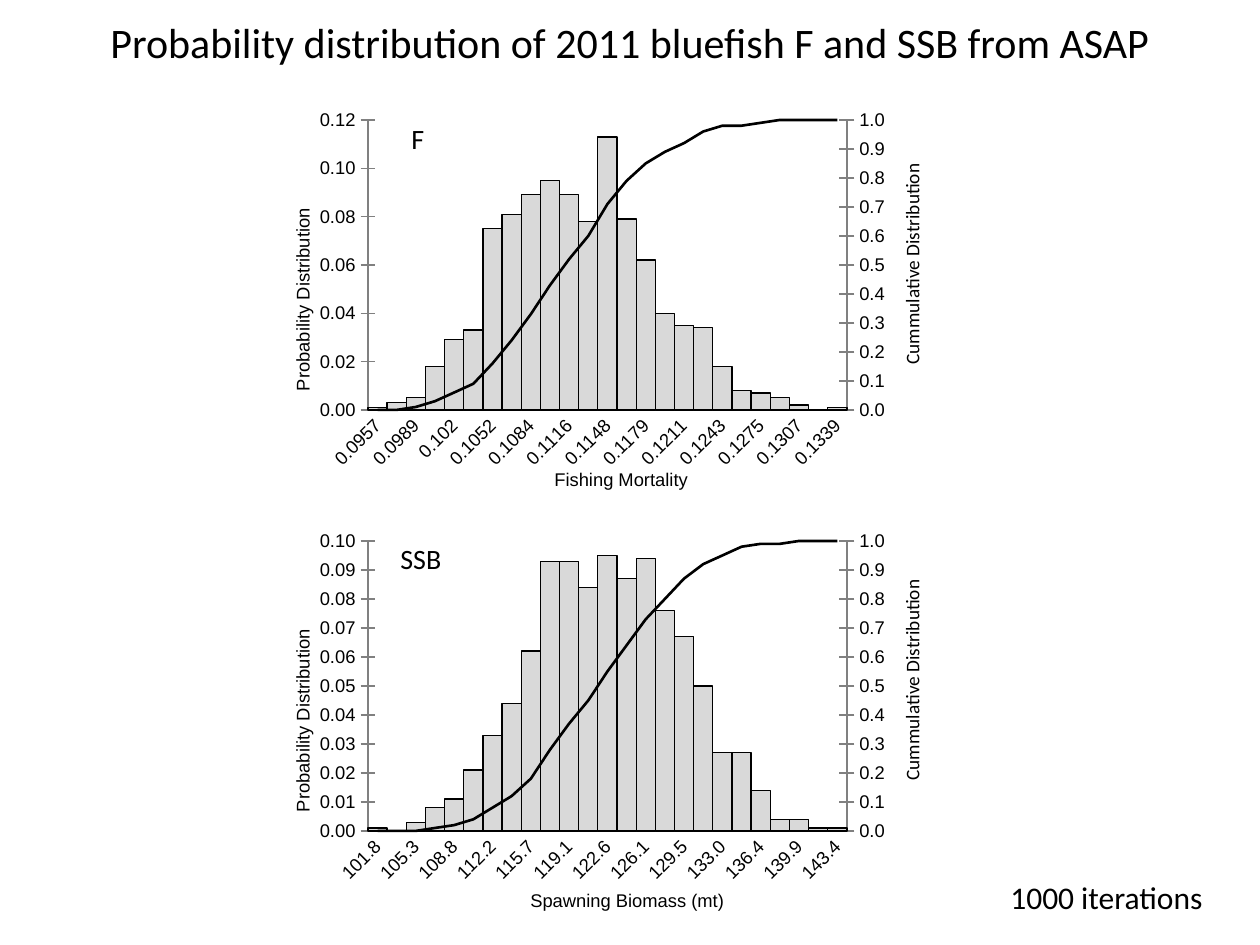
from copy import deepcopy
from dataclasses import dataclass
from itertools import accumulate

from pptx import Presentation
from pptx.chart.axis import CategoryAxis, ValueAxis
from pptx.chart.data import CategoryChartData
from pptx.dml.color import RGBColor
from pptx.enum.chart import XL_CHART_TYPE as ChartType, XL_MARKER_STYLE as Marker, XL_TICK_MARK as Tick
from pptx.enum.text import MSO_ANCHOR as Anchor, MSO_AUTO_SIZE as AutoSize, PP_ALIGN as Align
from pptx.oxml import parse_xml
from pptx.oxml.ns import nsdecls, qn
from pptx.util import Pt

EMU_PER_PX = 914400 / 126
CHART_WIDTH, CHART_HEIGHT = 659, 447


def px(length):
    return round(length * EMU_PER_PX)


@dataclass(frozen=True)
class Theme:
    ink: RGBColor = RGBColor(0, 0, 0)
    bar: RGBColor = RGBColor(0xD9, 0xD9, 0xD9)
    axis: RGBColor = RGBColor(0x80, 0x80, 0x80)
    text_font: str = "Calibri"
    chart_font: str = "Arial"
    title: float = 24
    note: float = 18
    label: float = 16
    side: float = 11
    chart: float = 10.5


def style_font(font, name, size, color):
    font.name, font.size, font.bold = name, Pt(size), False
    font.color.rgb = color


def write(frame, text, *, font, size, color, align=Align.LEFT, wrap=False, fit=AutoSize.NONE):
    frame.word_wrap, frame.auto_size = wrap, fit
    frame.vertical_anchor = Anchor.TOP
    para = frame.paragraphs[0]
    para.alignment = align
    span = para.add_run()
    span.text = text
    style_font(span.font, font, size, color)


def place(owner, **lengths):
    """Give a chart part a manual layout, in px from the chart's corner."""
    old = owner.find(qn("c:layout"))
    if old is not None:
        owner.remove(old)
    inner = '<c:layoutTarget val="inner"/>' if "w" in lengths else ""
    modes = "".join(f'<c:{key}Mode val="edge"/>' for key in "xy")
    values = "".join(f'<c:{key} val="{length / (CHART_WIDTH if key in "xw" else CHART_HEIGHT):.4f}"/>'
                     for key, length in lengths.items())
    layout = parse_xml(
        f'<c:layout {nsdecls("c")}><c:manualLayout>{inner}{modes}{values}</c:manualLayout></c:layout>')
    text = owner.find(qn("c:tx"))
    owner.insert(0 if text is None else 1, layout)


def split_to_line(chart):
    """Move the second series to a line plot and return the left and right axes."""
    area = chart.element.find(".//" + qn("c:plotArea"))
    bars = area.find(qn("c:barChart"))
    series = bars.findall(qn("c:ser"))[1]
    invert = series.find(qn("c:invertIfNegative"))
    if invert is not None:
        series.remove(invert)
    lines = parse_xml(
        f'<c:lineChart {nsdecls("c")}><c:grouping val="standard"/><c:varyColors val="0"/>'
        '<c:marker val="1"/><c:axId val="101"/><c:axId val="102"/></c:lineChart>')
    lines.insert(2, series)
    bars.addnext(lines)
    left = area.find(qn("c:valAx"))
    right, hidden = deepcopy(left), deepcopy(area.find(qn("c:catAx")))
    left.addnext(right)
    right.addnext(hidden)
    for axis, own, other in ((hidden, "101", "102"), (right, "102", "101")):
        axis.find(qn("c:axId")).set("val", own)
        axis.find(qn("c:crossAx")).set("val", other)
    right.find(qn("c:axPos")).set("val", "r")
    right.find(qn("c:crosses")).set("val", "max")
    CategoryAxis(hidden).visible = False
    return ValueAxis(left), ValueAxis(right)


class SlideBuilder:
    """Holds the theme and the current slide, and adds each kind of element."""

    def __init__(self, deck, theme):
        self.theme = theme
        self.page = deck.slides.add_slide(deck.slide_layouts[5])

    def title(self, text, left, top, width, height):
        box = self.page.shapes.title
        box.left, box.top, box.width, box.height = map(px, (left, top, width, height))
        write(box.text_frame, text, font=self.theme.text_font, size=self.theme.title,
              color=self.theme.ink, align=Align.CENTER, wrap=True)

    def text(self, text, left, top, width, height, size, rotation=0):
        box = self.page.shapes.add_textbox(*map(px, (left, top, width, height)))
        box.rotation = rotation
        write(box.text_frame, text, font=self.theme.text_font, size=size, color=self.theme.ink,
              fit=AutoSize.NONE if rotation else AutoSize.SHAPE_TO_FIT_TEXT)

    def axis_title(self, axis, text, x, y, rotation=0):
        title = axis.axis_title
        span = title.text_frame.paragraphs[0].add_run()
        span.text = text
        style_font(span.font, self.theme.chart_font, self.theme.chart, self.theme.ink)
        title.element.find(".//" + qn("a:bodyPr")).set("rot", str(rotation * 60000))
        place(title.element, x=x, y=y)

    def value_axis(self, axis, top, step, number_format):
        axis.minimum_scale, axis.maximum_scale, axis.major_unit = 0, top, step
        axis.has_major_gridlines = False
        axis.major_tick_mark = Tick.CROSS
        axis.tick_labels.number_format = number_format
        axis.tick_labels.number_format_is_linked = False
        axis.format.line.color.rgb = self.theme.axis

    def histogram(self, left, top, *, categories, shares, peak, step, name, name_x):
        theme = self.theme
        data = CategoryChartData()
        data.categories = categories
        data.add_series("Series 1", shares)
        data.add_series("Series 2", [round(total, 2) for total in accumulate(shares)])
        chart = self.page.shapes.add_chart(
            ChartType.COLUMN_CLUSTERED, *map(px, (left, top, CHART_WIDTH, CHART_HEIGHT)), data).chart
        chart.has_legend = chart.has_title = False
        style_font(chart.font, theme.chart_font, theme.chart, theme.ink)
        share_axis, total_axis = split_to_line(chart)
        place(chart.element.find(".//" + qn("c:plotArea")), x=95, y=57, w=479, h=290)

        bars, curve = chart.plots
        bars.gap_width, bars.vary_by_categories = 0, False
        columns = bars.series[0].format
        columns.fill.solid()
        columns.fill.fore_color.rgb = theme.bar
        columns.line.color.rgb, columns.line.width = theme.ink, Pt(0.75)
        total = curve.series[0]
        total.smooth, total.marker.style = False, Marker.NONE
        total.format.line.color.rgb, total.format.line.width = theme.ink, Pt(1.5)

        self.value_axis(share_axis, peak, step, "0.00")
        self.value_axis(total_axis, 1, 0.1, "#,##0.0")
        bottom = chart.category_axis
        bottom.major_tick_mark = Tick.NONE
        bottom.format.line.color.rgb = theme.axis
        style_font(bottom.tick_labels.font, theme.chart_font, theme.chart, theme.ink)
        node = chart.element.find(".//" + qn("c:catAx"))
        node.find(qn("c:txPr")).find(qn("a:bodyPr")).set("rot", str(-45 * 60000))
        node.find(qn("c:noMultiLvlLbl")).addprevious(
            parse_xml(f'<c:tickLblSkip {nsdecls("c")} val="2"/>'))
        self.axis_title(bottom, name, name_x, 401)
        self.axis_title(share_axis, "Probability Distribution", 14, 142, -90)


MORTALITY = dict(
    categories=("0.0957 0.0973 0.0989 0.1004 0.102 0.1036 0.1052 0.1068 0.1084 0.11 0.1116 0.1132 0.1148 "
                "0.1164 0.1179 0.1195 0.1211 0.1227 0.1243 0.1259 0.1275 0.1291 0.1307 0.1323 0.1339").split(),
    shares=[0.001, 0.003, 0.005, 0.018, 0.029, 0.033, 0.075, 0.081, 0.089, 0.095, 0.089, 0.078, 0.113,
            0.079, 0.062, 0.04, 0.035, 0.034, 0.018, 0.008, 0.007, 0.005, 0.002, 0, 0.001],
    peak=0.12, step=0.02, name="Fishing Mortality", name_x=278)
BIOMASS = dict(
    categories=("101.8 103.6 105.3 107.0 108.8 110.5 112.2 113.9 115.7 117.4 119.1 120.9 122.6 "
                "124.3 126.1 127.8 129.5 131.3 133.0 134.7 136.4 138.2 139.9 141.6 143.4").split(),
    shares=[0.001, 0, 0.003, 0.008, 0.011, 0.021, 0.033, 0.044, 0.062, 0.093, 0.093, 0.084, 0.095,
            0.087, 0.094, 0.076, 0.067, 0.05, 0.027, 0.027, 0.014, 0.004, 0.004, 0.001, 0.001],
    peak=0.1, step=0.01, name="Spawning Biomass (mt)", name_x=254)


def main():
    deck = Presentation()
    deck.slide_width, deck.slide_height = px(1260), px(945)
    theme = Theme()
    slide = SlideBuilder(deck, theme)
    slide.title("Probability distribution of 2011 bluefish F and SSB from ASAP", 84, 10, 1092, 63)
    for top, histogram in ((63, MORTALITY), (484, BIOMASS)):
        slide.histogram(273, top, **histogram)
    for top in (262, 678):
        slide.text("Cummulative Distribution", 809, top, 200, 30, theme.side, rotation=270)
    slide.text("F", 399, 115, 39, 47, theme.label)
    slide.text("SSB", 388, 535, 67, 47, theme.label)
    slide.text("1000 iterations", 998, 872, 219, 50, theme.note)
    deck.save("out.pptx")


if __name__ == "__main__":
    main()
